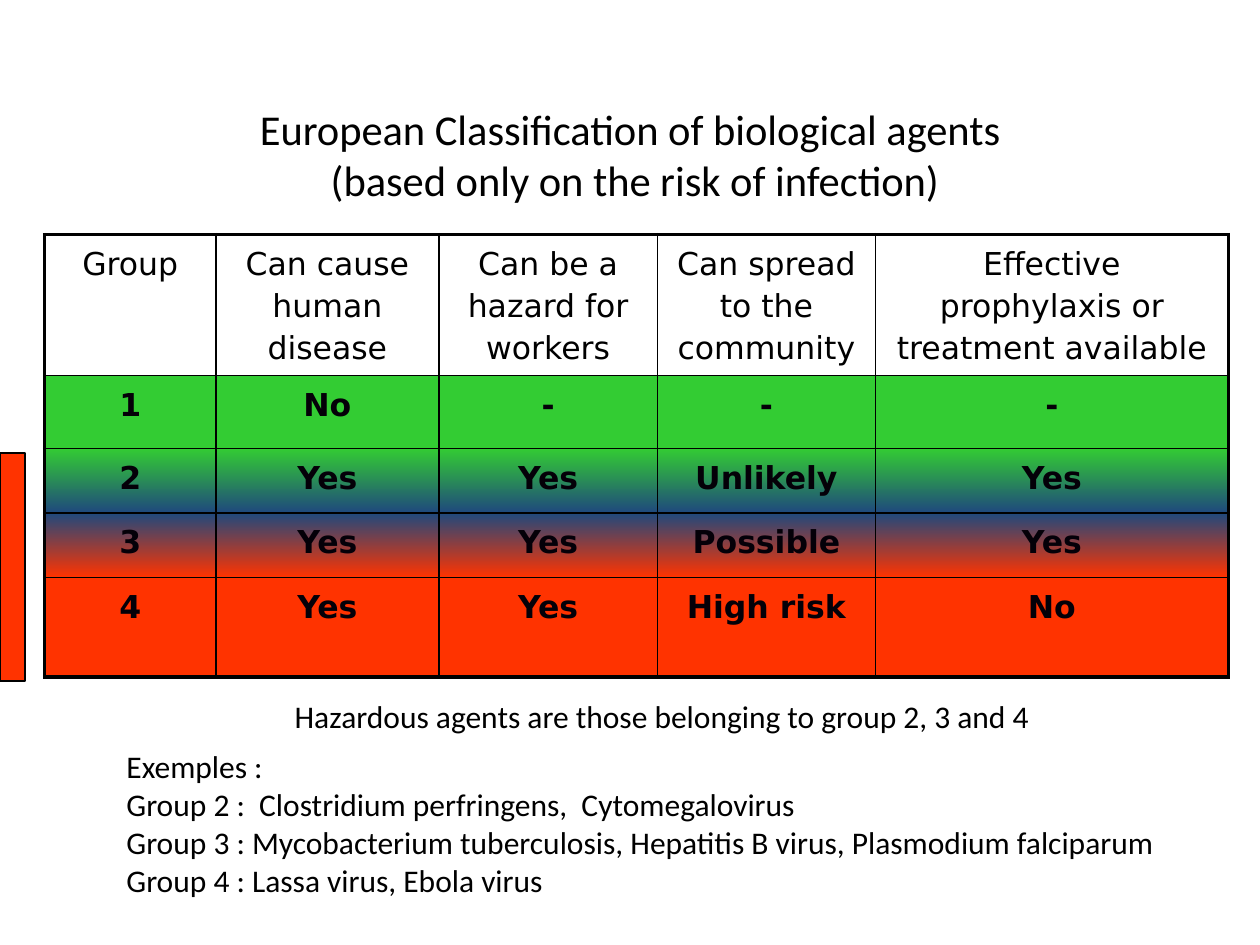
from lxml.etree import SubElement
from pptx import Presentation
from pptx.dml.color import RGBColor
from pptx.enum.shapes import MSO_SHAPE
from pptx.enum.text import MSO_ANCHOR, MSO_AUTO_SIZE, PP_ALIGN
from pptx.oxml.ns import qn
from pptx.util import Cm, Pt

# Content
TITLE = "European Classification of biological agents \v(based only on the risk of infection)"
ROWS = [
    ("Group", "Can cause human disease", "Can be a hazard for workers",
     "Can spread to the community", "Effective prophylaxis or treatment available"),
    ("1", "No", "-", "-", "-"),
    ("2", "Yes", "Yes", "Unlikely", "Yes"),
    ("3", "Yes", "Yes", "Possible", "Yes"),
    ("4", "Yes", "Yes", "High risk", "No"),
]
NOTE = ["Hazardous agents are those belonging to group 2, 3 and 4"]
EXAMPLES = [
    "Exemples :",
    "Group 2 :  Clostridium perfringens,  Cytomegalovirus",
    "Group 3 : Mycobacterium tuberculosis, Hepatitis B virus, Plasmodium falciparum",
    "Group 4 : Lassa virus, Ebola virus",
]

# Style: each row has no colour, one colour, or a top and a bottom colour
BLACK, GREEN, BLUE, RED = "000000", "33CC33", "1F497D", "FF3300"
ROW_COLOURS = [(), (GREEN,), (GREEN, BLUE), (BLUE, RED), (RED,)]
COLUMN_WIDTHS = [3.45, 4.5, 4.4, 4.4, 7.11]
ROW_HEIGHTS = [2.84, 1.47, 1.3, 1.3, 2.01]
THIN, THICK = 1, 2.25


def colour(value):
    return RGBColor.from_string(value)


def write(frame, lines, size=18, font="Calibri", color=BLACK, bold=False,
          align=PP_ALIGN.LEFT, spacing=None):
    frame.text = "\n".join(lines)
    for paragraph in frame.paragraphs:
        paragraph.alignment = align
        paragraph.line_spacing = spacing
        for run in paragraph.runs:
            run.font.size = Pt(size)
            run.font.name = font
            run.font.bold = bold
            run.font.color.rgb = colour(color)


def add_border(cell, side, width):
    line = SubElement(cell._tc.get_or_add_tcPr(), qn("a:ln" + side), w=str(Pt(width)))
    fill = SubElement(line, qn("a:solidFill"))
    SubElement(fill, qn("a:srgbClr"), val=BLACK)


def fill_cell(cell, colours):
    if not colours:
        cell.fill.background()
    elif len(colours) == 1:
        cell.fill.solid()
        cell.fill.fore_color.rgb = colour(colours[0])
    else:
        cell.fill.gradient()
        cell.fill.gradient_angle = 270
        for stop, value in zip(cell.fill.gradient_stops, colours):
            stop.color.rgb = colour(value)


def add_text(slide, lines, left, top, width, height):
    frame = slide.shapes.add_textbox(Cm(left), Cm(top), Cm(width), Cm(height)).text_frame
    frame.word_wrap = False
    frame.auto_size = MSO_AUTO_SIZE.SHAPE_TO_FIT_TEXT
    write(frame, lines)


def add_group_table(slide):
    last_row, last_column = len(ROWS) - 1, len(COLUMN_WIDTHS) - 1
    table = slide.shapes.add_table(
        len(ROWS), len(COLUMN_WIDTHS), Cm(0.9), Cm(4.73),
        Cm(sum(COLUMN_WIDTHS)), Cm(sum(ROW_HEIGHTS))).table
    table.first_row = table.horz_banding = False
    for column, width in zip(table.columns, COLUMN_WIDTHS):
        column.width = Cm(width)
    for r, (row, height) in enumerate(zip(table.rows, ROW_HEIGHTS)):
        row.height = Cm(height)
        for c, cell in enumerate(row.cells):
            write(cell.text_frame, [ROWS[r][c]], font="DejaVu Sans", bold=r > 0,
                  color="040008" if r else BLACK, align=PP_ALIGN.CENTER, spacing=1.15)
            outer = {"L": c == 0, "R": c == last_column, "T": r == 0, "B": r == last_row}
            for side, is_outer in outer.items():
                add_border(cell, side, THICK if is_outer else THIN)
            fill_cell(cell, ROW_COLOURS[r])


def main():
    presentation = Presentation()
    presentation.slide_width, presentation.slide_height = Cm(25.4), Cm(19.05)
    slide = presentation.slides.add_slide(presentation.slide_layouts[5])

    # Title
    title = slide.shapes.title
    title.left, title.top, title.width, title.height = Cm(3.1), Cm(2.34), Cm(19.4), Cm(1.52)
    frame = title.text_frame
    frame.auto_size = MSO_AUTO_SIZE.NONE
    frame.vertical_anchor = MSO_ANCHOR.MIDDLE
    frame.margin_left = frame.margin_right = frame.margin_top = frame.margin_bottom = Cm(0.13)
    write(frame, [TITLE], size=24.3, align=PP_ALIGN.CENTER)

    # Classification table
    add_group_table(slide)

    # Bar beside the hazardous groups
    bar = slide.shapes.add_shape(MSO_SHAPE.RECTANGLE, Cm(0), Cm(9.13), Cm(0.5), Cm(4.6))
    bar.shadow.inherit = False
    bar.fill.solid()
    bar.fill.fore_color.rgb = colour(RED)
    bar.line.color.rgb = colour(BLACK)
    bar.line.width = Pt(THIN)

    # Notes below the table
    add_text(slide, NOTE, 5.69, 13.92, 15.52, 1.03)
    add_text(slide, EXAMPLES, 2.3, 14.94, 21.46, 3.33)

    presentation.save("out.pptx")


if __name__ == "__main__":
    main()
